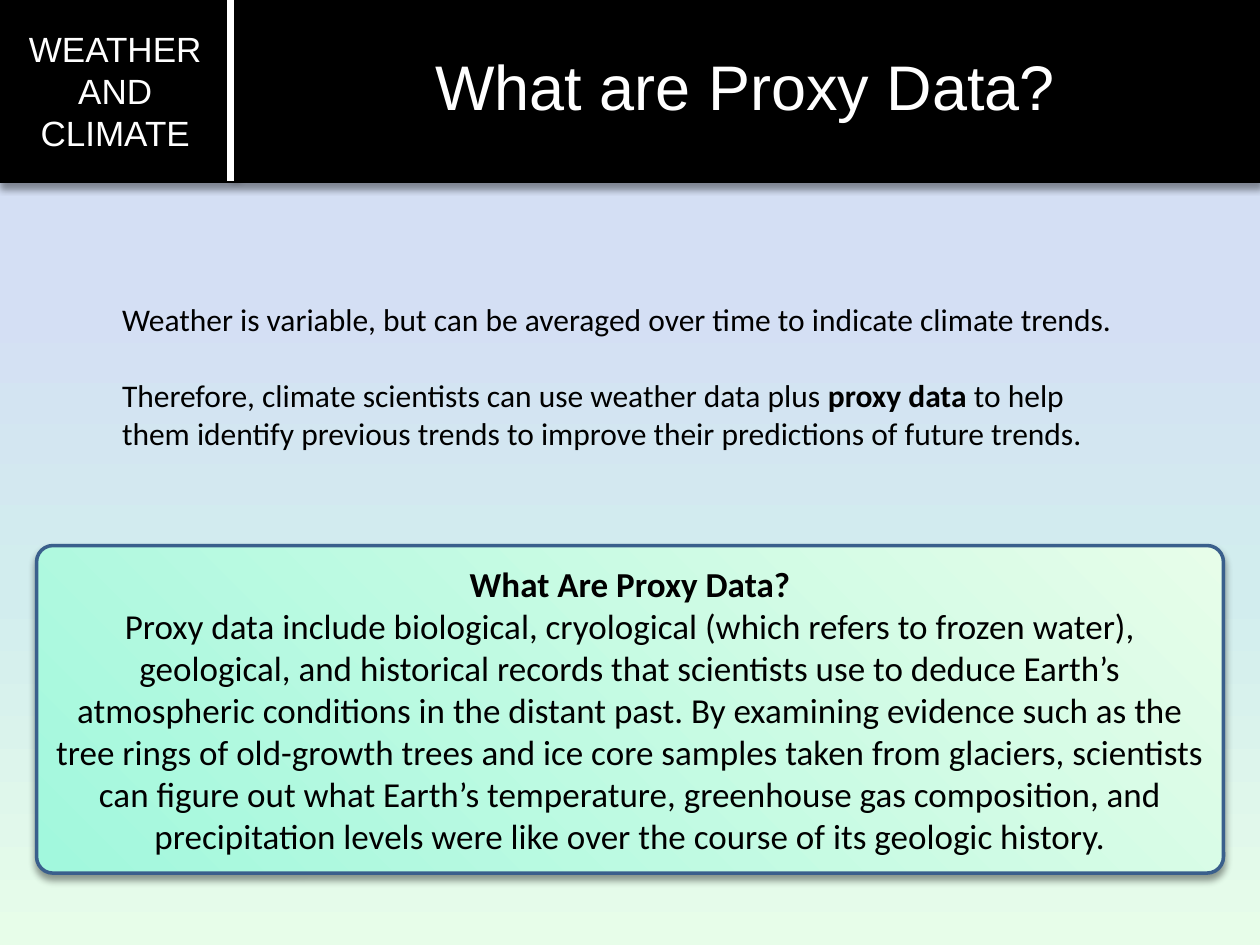
from lxml.etree import SubElement
from pptx import Presentation
from pptx.dml.color import RGBColor
from pptx.enum.shapes import MSO_CONNECTOR, MSO_SHAPE
from pptx.enum.text import MSO_ANCHOR, MSO_AUTO_SIZE, PP_ALIGN
from pptx.oxml.ns import qn
from pptx.util import Inches, Pt

COLORS = {"black": "000000", "white": "FFFFFF", "sky": "D4DFF4",
          "aqua": "D2EDEE", "mint": "E7FDE9", "green": "A2F8DD",
          "border": "3A5F8C"}
HEADING = {"name": "Arial", "color": "white"}
BODY = {"name": "Calibri", "color": "black"}


def rgb(name):
    return RGBColor.from_string(COLORS[name])


def set_gradient(fill, stops, angle):
    """Fill with (percent, colour) stops; the angle runs clockwise."""
    fill.gradient()
    grad = fill._fill._gradFill
    for child in list(grad):
        grad.remove(child)
    gs_list = SubElement(grad, qn("a:gsLst"))
    for pos, color in stops:
        gs = SubElement(gs_list, qn("a:gs"), pos=str(pos * 1000))
        SubElement(gs, qn("a:srgbClr"), val=COLORS[color])
    SubElement(grad, qn("a:lin"), ang=str(angle * 60000), scaled="0")


def set_outline(sp, color, width, shadow_angle):
    """Give a shape or connector its line and soft shadow."""
    sp.line.color.rgb = rgb(color)
    sp.line.width = Pt(width)
    effects = SubElement(sp._element.spPr, qn("a:effectLst"))
    shadow = SubElement(effects, qn("a:outerShdw"), blurRad=str(Pt(4)),
                        dist=str(Pt(3)), dir=str(shadow_angle * 60000),
                        rotWithShape="0")
    clr = SubElement(shadow, qn("a:srgbClr"), val=COLORS["black"])
    SubElement(clr, qn("a:alpha"), val="40000")


def write(tf, paragraphs, size, style, align, gap=0, **frame):
    """Write paragraphs, each a list of (text, bold) runs."""
    for name, value in {"word_wrap": True, **frame}.items():
        setattr(tf, name, value)
    for i, runs in enumerate(paragraphs):
        p = tf.add_paragraph() if i else tf.paragraphs[0]
        p.alignment = align
        p.space_before = Pt(gap if i else 0)
        for text, bold in runs:
            r = p.add_run()
            r.text = text
            for name, value in {"name": style["name"], "size": Pt(size),
                                "bold": bold}.items():
                setattr(r.font, name, value)
            r.font.color.rgb = rgb(style["color"])


def add_header(s, left, top, width, height):
    split = left + Inches(1.83)
    # Black banner
    banner = s.shapes.add_shape(MSO_SHAPE.RECTANGLE, left, top, width, height)
    banner.fill.solid()
    banner.fill.fore_color.rgb = rgb("black")
    set_outline(banner, "black", 2, 90)
    # Divider between topic and title
    divider = s.shapes.add_connector(MSO_CONNECTOR.STRAIGHT, split, top,
                                     split, top + height)
    set_outline(divider, "white", 4, 0)
    # Topic label
    topic = s.shapes.add_textbox(left, top + Inches(0.17), split - left, Inches(1.11))
    write(topic.text_frame, [[("WEATHER AND CLIMATE", False)]], 20, HEADING,
          PP_ALIGN.CENTER, auto_size=MSO_AUTO_SIZE.SHAPE_TO_FIT_TEXT)
    # Title, brought in front of the banner
    title = s.shapes.title
    title.left, title.top = split, top + Inches(0.05)
    title.width, title.height = left + width - split, Inches(1.25)
    write(title.text_frame, [[("What are Proxy Data?", False)]], 36, HEADING,
          PP_ALIGN.CENTER, vertical_anchor=MSO_ANCHOR.MIDDLE)
    s.shapes._spTree.append(title._element)


def add_intro(s, left, top, width, height):
    box = s.shapes.add_textbox(left, top, width, height)
    write(box.text_frame, [
        [("Weather is variable, but can be averaged over time to indicate "
          "climate trends.", False)],
        [("Therefore, climate scientists can use weather data plus ", False),
         ("proxy data", True),
         (" to help them identify previous trends to improve their "
          "predictions of future trends.", False)],
    ], 18, BODY, PP_ALIGN.LEFT, gap=22,
        auto_size=MSO_AUTO_SIZE.SHAPE_TO_FIT_TEXT)


def add_definition(s, left, top, width, height):
    card = s.shapes.add_shape(MSO_SHAPE.ROUNDED_RECTANGLE, left, top, width, height)
    card.adjustments[0] = 0.05
    set_gradient(card.fill, [(1, "green"), (100, "mint")], 315)
    set_outline(card, "border", 2, 90)
    write(card.text_frame, [
        [("What Are Proxy Data?", True)],
        [("Proxy data include biological, cryological (which refers to frozen "
          "water), geological, and historical records that scientists use to "
          "deduce Earth’s atmospheric conditions in the distant past. By "
          "examining evidence such as the tree rings of old-growth trees and "
          "ice core samples taken from glaciers, scientists can figure out "
          "what Earth’s temperature, greenhouse gas composition, and "
          "precipitation levels were like over the course of its geologic "
          "history.", False)],
    ], 20, BODY, PP_ALIGN.CENTER, vertical_anchor=MSO_ANCHOR.MIDDLE)


def main():
    prs = Presentation()
    prs.slide_width, prs.slide_height = Inches(10), Inches(7.5)
    s = prs.slides.add_slide(prs.slide_layouts.get_by_name("Title Only"))
    set_gradient(s.background.fill,
                 [(32, "sky"), (62, "aqua"), (100, "mint")], 90)
    add_header(s, 0, 0, prs.slide_width, Inches(1.44))
    add_intro(s, Inches(0.87), Inches(2.33), Inches(8.25), Inches(1.31))
    add_definition(s, Inches(0.29), Inches(4.33), Inches(9.42), Inches(2.6))
    prs.save("out.pptx")


if __name__ == "__main__":
    main()
